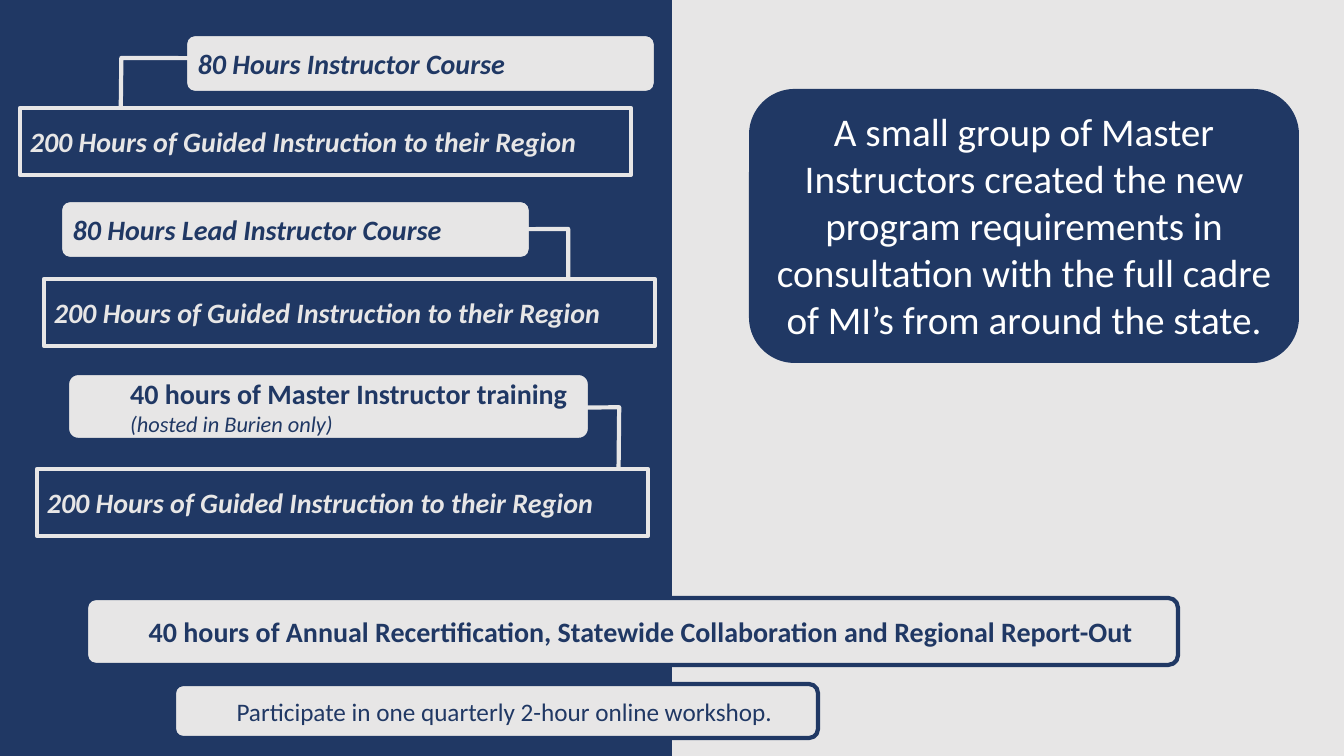
"""Build the instructor certification requirements slide."""
import pptx
import pptx.dml.color
import pptx.enum.shapes
import pptx.enum.text
import pptx.util

RGBColor = pptx.dml.color.RGBColor
SHAPES = pptx.enum.shapes.MSO_SHAPE
ALIGN = pptx.enum.text.PP_ALIGN
ANCHOR = pptx.enum.text.MSO_ANCHOR

NAVY = RGBColor(0x20, 0x38, 0x64)
PALE = RGBColor(0xE7, 0xE6, 0xE6)
WHITE = RGBColor(0xFF, 0xFF, 0xFF)

SLIDE_WIDTH, SLIDE_HEIGHT = 1344, 756
EMU_PER_PX = 12192000 / SLIDE_WIDTH
INDENT = 50
GUIDED = "200 Hours of Guided Instruction to their Region"

COURSE_SIZE = (471, 59)
GUIDED_SIZE = (611, 67)
STAGES = [
    ((185, 34, *COURSE_SIZE), [("80 Hours Instructor Course", 20, True, True)], 0,
     (20, 108, *GUIDED_SIZE), (-0.003, 0.165, -0.747, 0.166, -0.744, 0.28)),
    ((60, 200, *COURSE_SIZE), [("80 Hours Lead Instructor Course", 20, True, True)], 0,
     (44, 279, *GUIDED_SIZE), (-0.018, 0.858, -0.747, 0.858, -0.744, 0.792)),
    ((67, 373, 523, 67),
     [("40 hours of Master Instructor training", 20, True, False),
      ("(hosted in Burien only)", 16, False, True)], INDENT,
     (37, 469, *GUIDED_SIZE), (-0.018, 0.952, -0.921, 0.953, -0.918, 0.9)),
]


def px(length):
    """Turn pixels into EMU."""
    return pptx.util.Emu(round(length * EMU_PER_PX))


def add_block(slide, kind, box, fill, line=None, adjustments=()):
    """Add a flat shape with a solid fill and an optional outline."""
    block = slide.shapes.add_shape(kind, *map(px, box))
    block.shadow.inherit = False
    block.fill.solid()
    block.fill.fore_color.rgb = fill
    if line is None:
        block.line.fill.background()
    else:
        block.line.color.rgb = line
        block.line.width = pptx.util.Pt(3)
    for index, value in enumerate(adjustments):
        block.adjustments[index] = value
    return block


def write(block, lines, color, align=ALIGN.LEFT, anchor=ANCHOR.MIDDLE, indent=0):
    """Write lines of (text, size, bold, italic) as one paragraph."""
    frame = block.text_frame
    frame.word_wrap = True
    frame.vertical_anchor = anchor
    paragraph = frame.paragraphs[0]
    paragraph.alignment = align
    if indent:
        paragraph.level = 1
        properties = paragraph._p.get_or_add_pPr()
        properties.set("marL", str(px(indent)))
        properties.set("indent", "0")
    for number, (text, size, bold, italic) in enumerate(lines):
        if number:
            paragraph.add_line_break()
        run = paragraph.add_run()
        run.text = text
        run.font.name = "Calibri"
        run.font.size = pptx.util.Pt(size)
        run.font.bold = bold
        run.font.italic = italic
        run.font.color.rgb = color


def add_bar(slide, box, lines, indent=0, adjustments=()):
    """Add a pale rounded requirement bar."""
    bar = add_block(slide, SHAPES.ROUNDED_RECTANGLE, box, PALE, NAVY, adjustments)
    write(bar, lines, NAVY, indent=indent)


def add_stage(slide, course_box, course, indent, guided_box, leader):
    """Add a course bar and the guided instruction callout tied to it."""
    add_bar(slide, course_box, course, indent)
    guided = add_block(slide, SHAPES.LINE_CALLOUT_2, guided_box, NAVY, PALE, leader)
    write(guided, [(GUIDED, 20, True, True)], PALE)


def add_background_note(slide, box):
    """Add the note on how the requirements were created."""
    note = add_block(slide, SHAPES.ROUNDED_RECTANGLE, box, NAVY)
    text = ("A small group of Master Instructors created the new program requirements "
            "in consultation with the full cadre of MI’s from around the state.")
    write(note, [(text, 28, False, False)], WHITE, ALIGN.CENTER, ANCHOR.TOP)
    note.text_frame.auto_size = pptx.enum.text.MSO_AUTO_SIZE.SHAPE_TO_FIT_TEXT


def add_annual_requirements(slide, recertification_box, workshop_box):
    """Add the two yearly requirement bars."""
    add_bar(slide, recertification_box,
            [("40 hours of Annual Recertification, Statewide Collaboration "
              "and Regional Report-Out", 20, True, False)], INDENT, (0.144,))
    add_bar(slide, workshop_box,
            [("Participate in one quarterly 2-hour online workshop.", 18, False, False)],
            INDENT)


def main():
    """Build and save the slide."""
    deck = pptx.Presentation()
    deck.slide_width, deck.slide_height = px(SLIDE_WIDTH), px(SLIDE_HEIGHT)
    slide = deck.slides.add_slide(deck.slide_layouts[6])
    slide.background.fill.solid()
    slide.background.fill.fore_color.rgb = PALE
    add_block(slide, SHAPES.RECTANGLE, (0, 0, SLIDE_WIDTH // 2, SLIDE_HEIGHT), NAVY)
    for stage in STAGES:
        add_stage(slide, *stage)
    add_background_note(slide, (749, 89, 550, 274))
    add_annual_requirements(slide, (86, 598, 1092, 67), (174, 684, 644, 54))
    deck.save("out.pptx")


if __name__ == "__main__":
    main()
